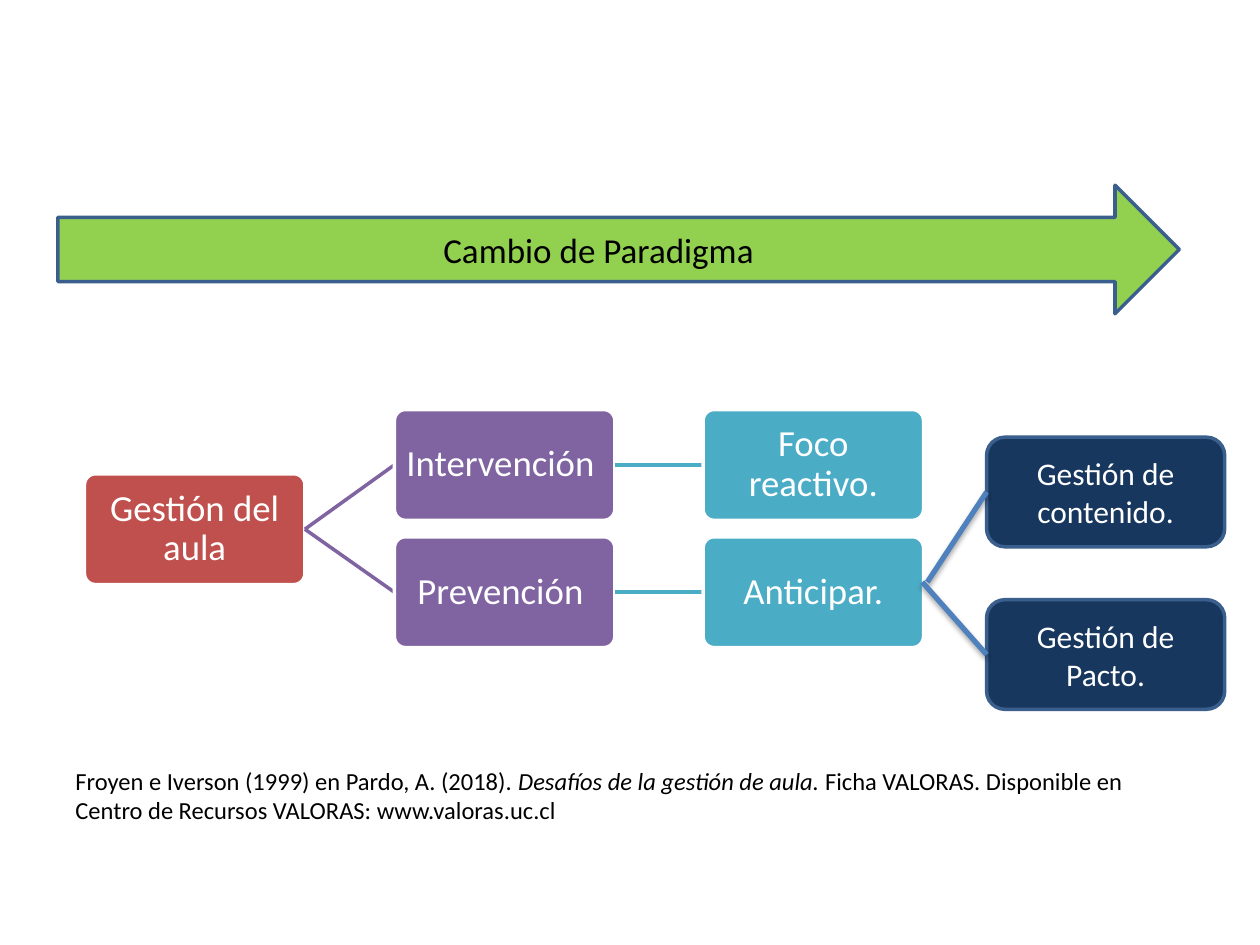
from lxml import etree
from pptx import Presentation
from pptx.dml.color import RGBColor
from pptx.enum import shapes, text
from pptx.oxml import parse_xml
from pptx.oxml.ns import nsdecls, qn
from pptx.util import Inches, Pt

BLACK = RGBColor(0x00, 0x00, 0x00)
WHITE = RGBColor(0xFF, 0xFF, 0xFF)
GREEN = RGBColor(0x92, 0xD0, 0x50)
RED = RGBColor(0xC0, 0x50, 0x4D)
PURPLE = RGBColor(0x80, 0x64, 0xA2)
TEAL = RGBColor(0x4B, 0xAC, 0xC6)
NAVY = RGBColor(0x17, 0x37, 0x5E)
BLUE = RGBColor(0x4F, 0x81, 0xBD)
OUTLINE = RGBColor(0x3A, 0x5F, 0x8C)

deck = Presentation()
deck.slide_width, deck.slide_height = Inches(10), Inches(7.5)
page = deck.slides.add_slide(deck.slide_layouts[6])


def add_box(kind, left, top, width, height, fill, line, words, size, color):
    box = page.shapes.add_shape(kind, Inches(left), Inches(top), Inches(width), Inches(height))
    box.shadow.inherit = False
    box.fill.solid()
    box.fill.fore_color.rgb = fill
    box.line.color.rgb = line
    box.line.width = Pt(2)
    frame = box.text_frame
    frame.word_wrap = True
    frame.vertical_anchor = text.MSO_ANCHOR.MIDDLE
    frame.text = words
    para = frame.paragraphs[0]
    para.alignment = text.PP_ALIGN.CENTER
    para.font.name = "Calibri"
    para.font.size = Pt(size)
    para.font.color.rgb = color
    return box


def add_link(left, top, right, bottom, color, width):
    link = page.shapes.add_connector(
        shapes.MSO_CONNECTOR.STRAIGHT, Inches(left), Inches(top), Inches(right), Inches(bottom))
    link.line.color.rgb = color
    link.line.width = Pt(width)
    etree.SubElement(link._element.spPr, qn("a:effectLst"))
    return link


add_box(shapes.MSO_SHAPE.RIGHT_ARROW, 0.46, 1.47, 8.9, 1.02, GREEN, OUTLINE,
        "Cambio de Paradigma ", 20, BLACK)

NODE_WIDTH, NODE_HEIGHT = 1.75, 0.88
COLUMNS = [0.67, 3.13, 5.58]
TOP_ROW, MIDDLE_ROW, BOTTOM_ROW = 3.25, 3.76, 4.26
nodes = {}
for words, column, top, fill, parent in [
    ("Gestión del aula", 0, MIDDLE_ROW, RED, None),
    ("Intervención ", 1, TOP_ROW, PURPLE, "Gestión del aula"),
    ("Foco reactivo.", 2, TOP_ROW, TEAL, "Intervención "),
    ("Prevención ", 1, BOTTOM_ROW, PURPLE, "Gestión del aula"),
    ("Anticipar.", 2, BOTTOM_ROW, TEAL, "Prevención "),
]:
    left = COLUMNS[column]
    link = add_link(left, top, left, top, fill, 2) if parent else None
    node = add_box(shapes.MSO_SHAPE.ROUNDED_RECTANGLE, left, top, NODE_WIDTH, NODE_HEIGHT,
                   fill, WHITE, words, 21, WHITE)
    node.adjustments[0] = 0.1
    frame = node.text_frame
    frame.margin_left = frame.margin_right = Inches(0.03)
    frame.margin_top = frame.margin_bottom = Inches(0.03)
    frame.paragraphs[0].line_spacing = 0.9
    nodes[words] = node
    if link:
        link.begin_connect(nodes[parent], 3)
        link.end_connect(node, 1)

outcomes = [
    add_box(shapes.MSO_SHAPE.ROUNDED_RECTANGLE, 7.83, top, 1.89, 0.87, NAVY, OUTLINE,
            words, 18, WHITE)
    for words, top in [("Gestión de contenido.", 3.47), ("Gestión de Pacto.", 4.76)]
]
for outcome, start in zip(outcomes, [7.36, 7.32]):
    link = add_link(start, 4.62, 7.83, 4.62, BLUE, 3)
    link.end_connect(outcome, 1)
    link._element.spPr.find(qn("a:effectLst")).append(parse_xml(
        f'<a:outerShdw {nsdecls("a")} blurRad="{Pt(3.1)}" dist="{Pt(1.8)}" dir="5400000" '
        'rotWithShape="0"><a:srgbClr val="000000"><a:alpha val="35000"/></a:srgbClr></a:outerShdw>'))

citation = page.shapes.add_textbox(Inches(0.5), Inches(6.03), Inches(9.06), Inches(0.57))
citation.text_frame.word_wrap = True
para = citation.text_frame.paragraphs[0]
for words, italic in [
    ("Froyen e Iverson (1999) en Pardo, A. (2018). ", False),
    ("Desafíos de la gestión de aula. ", True),
    ("Ficha VALORAS. Disponible en Centro de Recursos VALORAS: www.valoras.uc.cl", False),
]:
    span = para.add_run()
    span.text = words
    span.font.name = "Calibri"
    span.font.size = Pt(14)
    span.font.italic = italic
    span.font.color.rgb = BLACK

deck.save("out.pptx")
